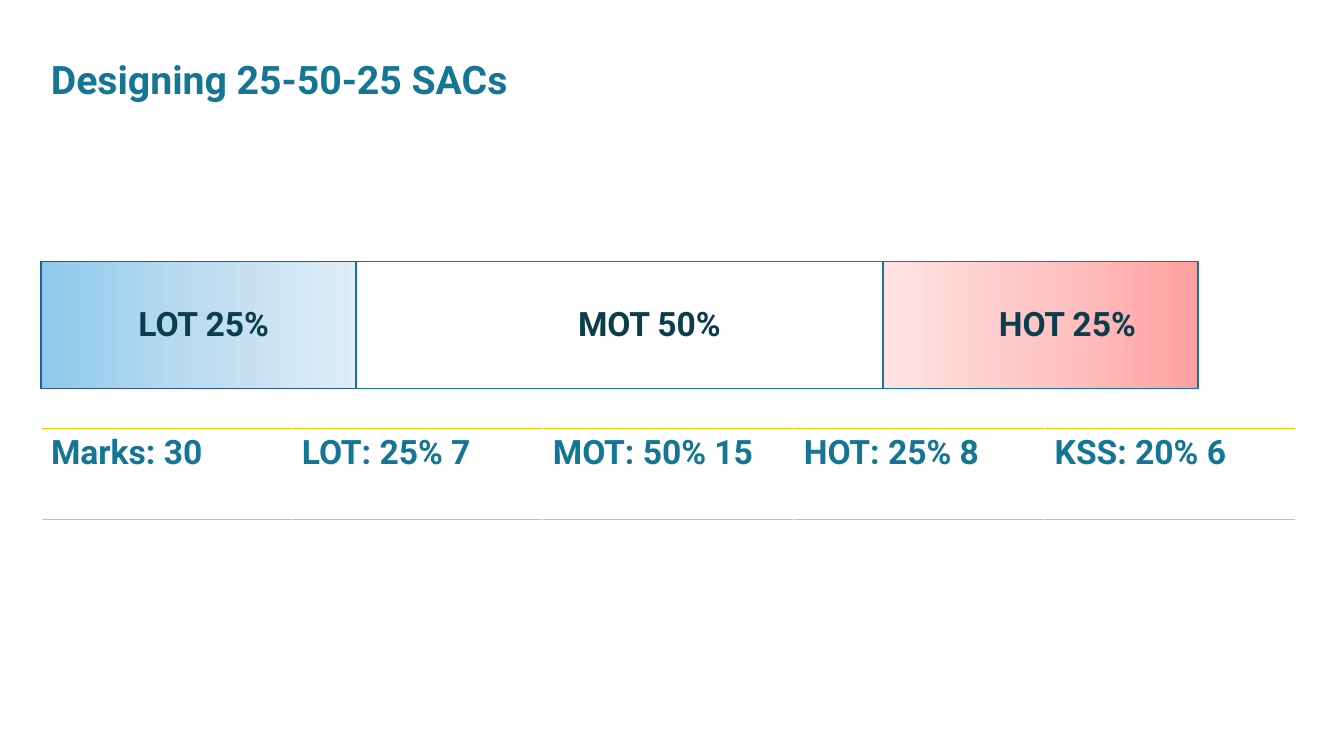
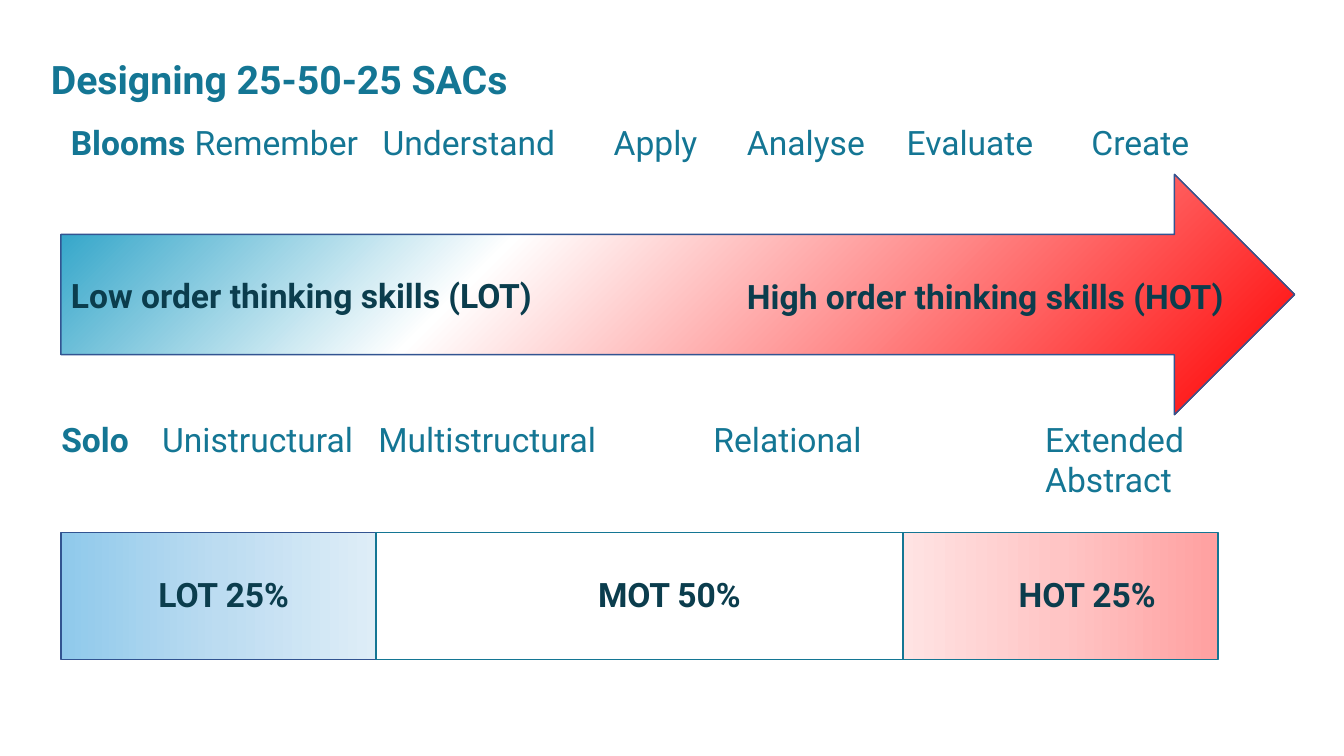
import copy

import pptx
import pptx.dml.color
import pptx.enum.shapes
import pptx.enum.text
import pptx.oxml
import pptx.oxml.ns
import pptx.util

PX = 9525
RGB = pptx.dml.color.RGBColor
TEAL = RGB(0x14, 0x76, 0x94)
DARK = RGB(0x0B, 0x3D, 0x4D)
NAVY = RGB(0x32, 0x54, 0x91)
WHITE = RGB(0xFF, 0xFF, 0xFF)
GOLD = RGB(0xFF, 0xC0, 0x00)
GREY = RGB(0xBF, 0xBF, 0xBF)
ARROW = ((0, RGB(0x1B, 0x9B, 0xC3)), (0.35, WHITE), (1, RGB(0xFF, 0x00, 0x00)))
BLUES = ((0, RGB(0x8F, 0xC9, 0xEB)), (0.5, RGB(0xBC, 0xDC, 0xF1)), (1, RGB(0xDE, 0xED, 0xF7)))
REDS = ((0, RGB(0xFF, 0xE3, 0xE3)), (0.5, RGB(0xFF, 0xC5, 0xC5)), (1, RGB(0xFF, 0xA0, 0xA0)))

FONT = "Roboto"
TITLE = "Designing 25-50-25 SACs"
RECT = pptx.enum.shapes.MSO_SHAPE.RECTANGLE
RIGHT_ARROW = pptx.enum.shapes.MSO_SHAPE.RIGHT_ARROW
LEFT = pptx.enum.text.PP_ALIGN.LEFT
CENTER = pptx.enum.text.PP_ALIGN.CENTER
qn = pptx.oxml.ns.qn
NS = pptx.oxml.ns.nsdecls("a")


def text(p, words, size=24, color=TEAL, bold=True, align=LEFT, tabs=()):
    r = p.add_run()
    r.text = words
    r.font.name = FONT
    r.font.size = pptx.util.Pt(size)
    r.font.bold = bold
    r.font.color.rgb = color
    p.alignment = align
    if tabs:
        stops = "".join(f'<a:tab pos="{t * PX}" algn="l"/>' for t in tabs)
        p._p.get_or_add_pPr().append(
            pptx.oxml.parse_xml(f"<a:tabLst {NS}>{stops}</a:tabLst>"))


def shape(s, kind, box, line, stops=None, angle=0):
    sp = s.shapes.add_shape(kind, *(v * PX for v in box))
    sp.shadow.inherit = False
    sp.line.color.rgb = line
    sp.line.width = pptx.util.Pt(1)
    if not stops:
        sp.fill.solid()
        sp.fill.fore_color.rgb = WHITE
        return
    sp.fill.gradient()
    sp.fill.gradient_angle = angle
    gs = sp._element.spPr.find(".//" + qn("a:gsLst"))
    gs.append(copy.deepcopy(gs[0]))
    for stop, (position, color) in zip(sp.fill.gradient_stops, stops):
        stop.position = position
        stop.color.rgb = color


prs = pptx.Presentation()
prs.slide_width = 1280 * PX
prs.slide_height = 720 * PX

for bar_x, bar_y in ((39, 249), (58, 507)):
    s = prs.slides.add_slide(prs.slide_layouts[6])
    tb = s.shapes.add_textbox(39 * PX, 48 * PX, 1151 * PX, 56 * PX)
    tb.text_frame.word_wrap = True
    text(tb.text_frame.paragraphs[0], TITLE, size=28)

    x = bar_x
    for label, width, label_dx, label_w, line, stops in (
        ("LOT 25%", 300, 78, 154, NAVY, BLUES),
        ("MOT 50%", 502, 196, 167, TEAL, None),
        ("HOT 25%", 300, 96, 159, TEAL, REDS),
    ):
        shape(s, RECT, (x, bar_y, width, 121), line, stops)
        tb = s.shapes.add_textbox((x + label_dx) * PX, (bar_y + 35) * PX, label_w * PX, 48 * PX)
        tb.text_frame.word_wrap = False
        text(tb.text_frame.paragraphs[0], label, color=DARK, align=CENTER)
        x += width

marks_slide, skills_slide = prs.slides

marks = ("Marks: 30", "LOT: 25% 7", "MOT: 50% 15", "HOT: 25% 8", "KSS: 20% 6")
table = marks_slide.shapes.add_table(
    1, len(marks), 39 * PX, 408 * PX, 1195 * PX, 87 * PX).table
table.first_row = False
table.horz_banding = False
for cell, mark in zip(table.rows[0].cells, marks):
    text(cell.text_frame.paragraphs[0], mark)
    cell.fill.background()
    for side, color in (("lnB", GREY), ("lnT", GOLD)):
        cell._tc.get_or_add_tcPr().insert(0, pptx.oxml.parse_xml(
            f'<a:{side} {NS} w="12700"><a:solidFill><a:srgbClr val="{color}"/>'
            f"</a:solidFill></a:{side}>"))

s = skills_slide
shape(s, RIGHT_ARROW, (58, 166, 1175, 229), NAVY, ARROW, angle=315)
for x, y, w, words in (
    (58, 257, 495, "Low order thinking skills (LOT)"),
    (702, 258, 507, "High order thinking skills (HOT)"),
):
    tb = s.shapes.add_textbox(x * PX, y * PX, w * PX, 48 * PX)
    tb.text_frame.word_wrap = False
    text(tb.text_frame.paragraphs[0], words, color=DARK)

for x, y, w, name, levels, tabs, below in (
    (58, 111, 1183, "Blooms",
     ("Remember", "Understand", "Apply", "Analyse", "Evaluate", "Create"),
     (118, 297, 517, 644, 796, 972), None),
    (49, 394, 1151, "Solo",
     ("Unistructural", "Multistructural", "Relational", "Extended"),
     (96, 302, 621, 937), "Abstract"),
):
    tb = s.shapes.add_textbox(x * PX, y * PX, w * PX, 87 * PX)
    tf = tb.text_frame
    tf.word_wrap = True
    p = tf.paragraphs[0]
    text(p, name)
    text(p, "".join("\t" + level for level in levels), bold=False, tabs=tabs)
    if below:
        text(tf.add_paragraph(), "\t" + below, bold=False, tabs=tabs[-1:])

prs.save("out.pptx")
